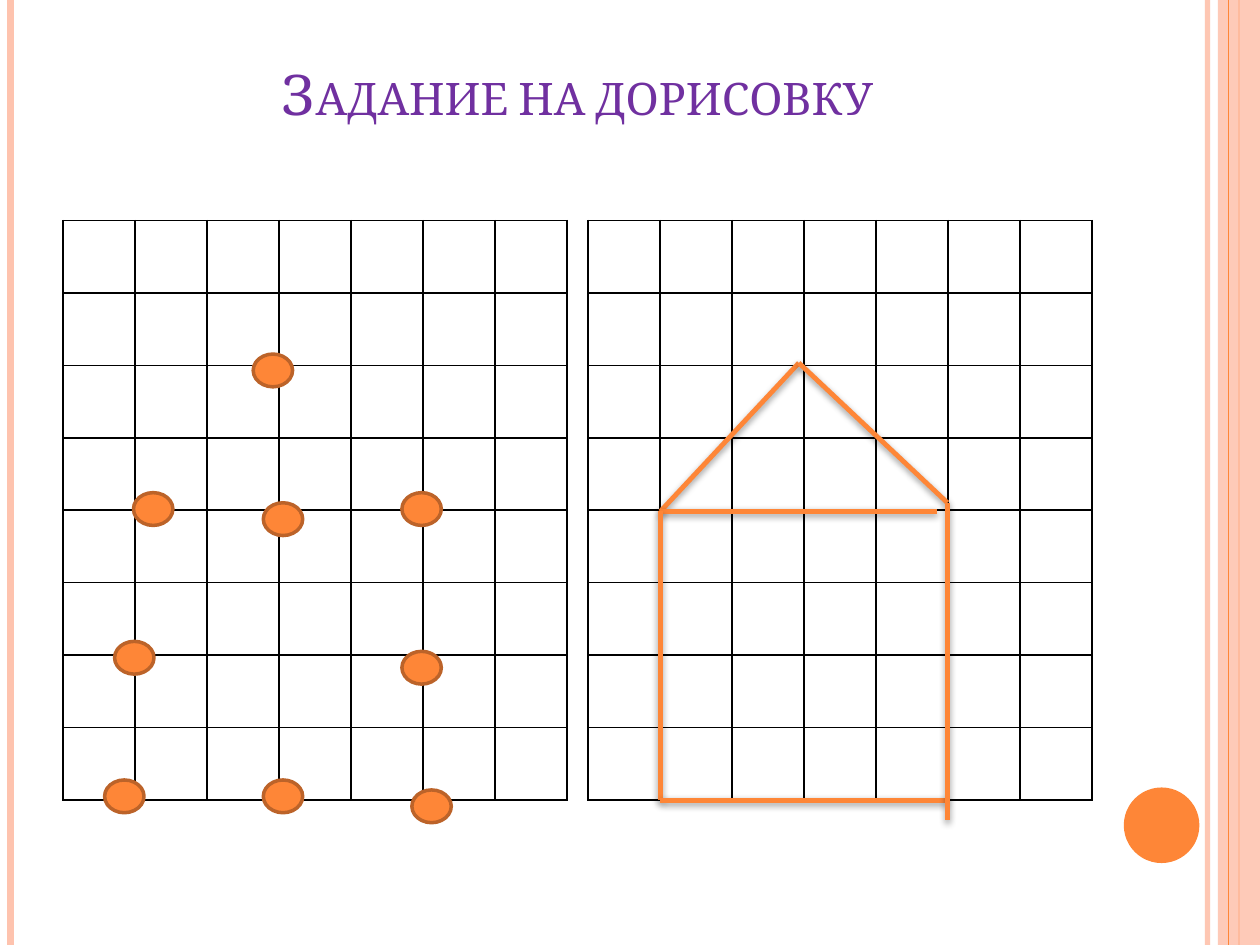
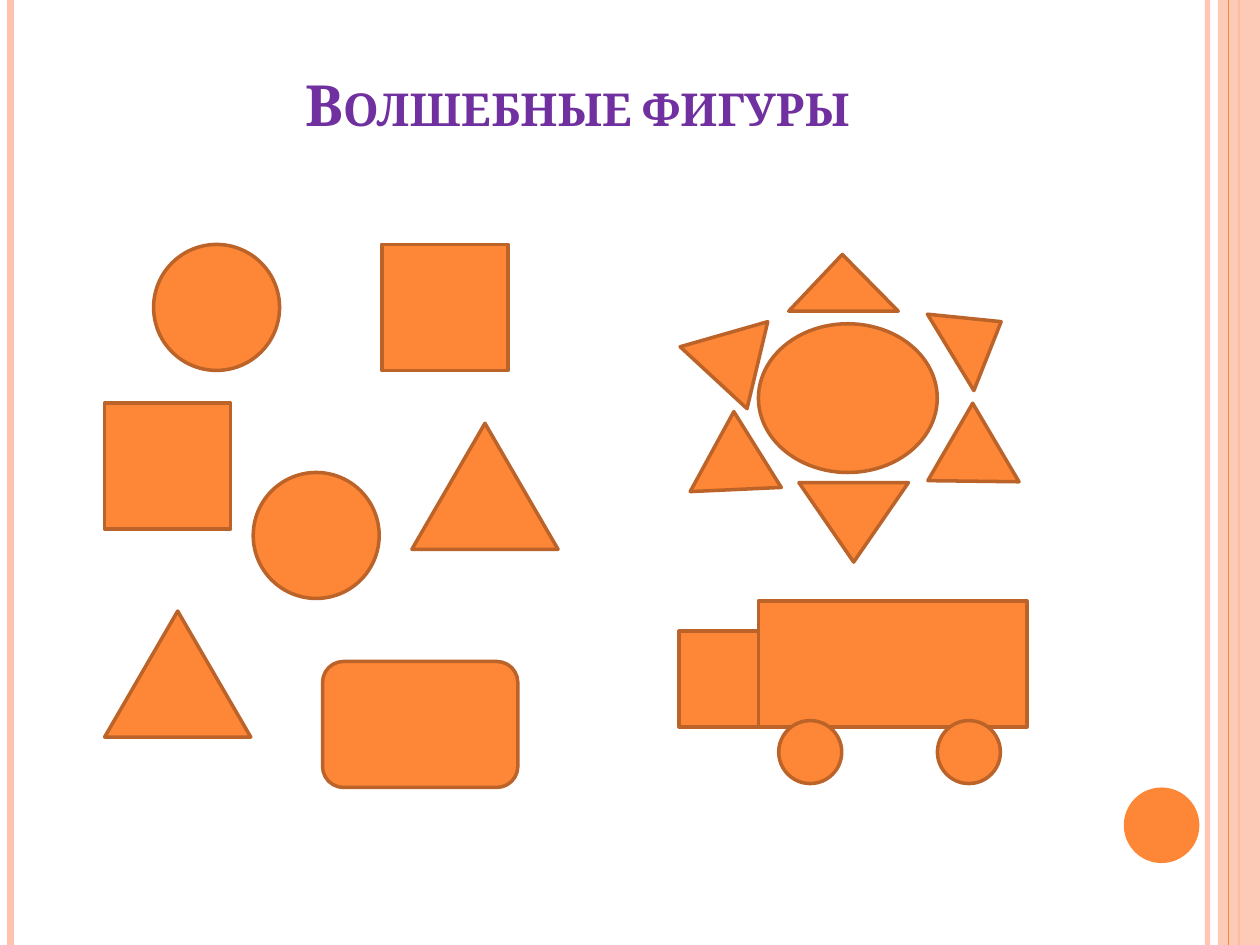
from lxml.etree import SubElement
from pptx import Presentation
from pptx.dml.color import RGBColor
from pptx.enum.shapes import MSO_CONNECTOR, MSO_SHAPE
from pptx.enum.text import MSO_ANCHOR, MSO_AUTO_SIZE, PP_ALIGN
from pptx.oxml.ns import qn
from pptx.util import Pt

WIDTH, HEIGHT = 720, 540
ORANGE, BROWN, PEACH = "FE8637", "BC6329", "FEC3AE"
PURPLE, BLACK = "7030A0", "000000"
FONT = "Cambria"
TITLE_BOX = (36, 21.6, 588, 90)

STRIPES = [
    (690, PEACH, 3, 93),
    (6, PEACH, 4.5, 100),
    (708, ORANGE, 1.5, 100),
    (702, ORANGE, 0.75, 100),
]
BAND = (696, 0, 24, HEIGHT)
BAND_OPACITY = 87
PAGE_DISC = (642.2, 450, 43.2, 43.2)

GRID_LEFTS, GRID_TOP = (36, 336), 126
GRID_COLUMNS, GRID_ROWS = 7, 8
GRID_WIDTH, GRID_HEIGHT = 288, 331.2

DOT_SIZE = (22.5, 18.75)
DOTS = [
    (229.7, 281.5), (65.5, 366.5), (144.7, 202.3),
    (229.7, 372.2), (235.4, 451.4), (150.5, 445.7),
    (59.8, 445.7), (150.5, 287.3), (76.3, 281.5),
]

EAVE_LEFT, EAVE_RIGHT = (377.3, 292.3), (541.4, 287.3)
ROOF_TOP, FLOOR_LEFT = (456.5, 207.4), (377.3, 457.2)
HOUSE_LINES = [
    (EAVE_LEFT, ROOF_TOP),
    (ROOF_TOP, EAVE_RIGHT),
    (EAVE_LEFT, (535.7, 292.3)),
    (EAVE_LEFT, FLOOR_LEFT),
    (FLOOR_LEFT, (541.4, 457.2)),
    (EAVE_RIGHT, (541.4, 468.7)),
]

LOOSE_FIGURES = [
    (MSO_SHAPE.RECTANGLE, (59.8, 230.4, 72, 72)),
    (MSO_SHAPE.OVAL, (144.7, 270, 72, 72)),
    (MSO_SHAPE.ISOSCELES_TRIANGLE, (59.8, 349.2, 83.5, 72)),
    (MSO_SHAPE.ROUNDED_RECTANGLE, (184.3, 378, 111.6, 72)),
    (MSO_SHAPE.RECTANGLE, (218.2, 139.7, 72, 72)),
    (MSO_SHAPE.OVAL, (87.8, 139.7, 72, 72)),
    (MSO_SHAPE.ISOSCELES_TRIANGLE, (235.4, 241.9, 83.5, 72)),
]
SUN_DISC = (MSO_SHAPE.OVAL, (433.4, 185, 102.2, 85))
SUN_RAYS = [
    ((450.7, 145.4, 62.6, 32.4), 0, 0.49),
    ((385.2, 180.7, 51.1, 45.4), 283.4, 0.5),
    ((456.5, 275.8, 62.6, 45.4), 180, 0.5),
    ((388.1, 246.2, 51.1, 45.4), 238, 0.5),
    ((537.1, 241.2, 51.1, 45.4), 120.1, 0.5),
    ((532.1, 175.7, 51.1, 33.8), 58.7, 0.5),
]
TRUCK = [
    (MSO_SHAPE.RECTANGLE, (433.4, 343.4, 153.4, 72)),
    (MSO_SHAPE.FLOWCHART_CONNECTOR, (445, 411.8, 36, 36)),
    (MSO_SHAPE.FLOWCHART_CONNECTOR, (535.7, 411.8, 36, 36)),
    (MSO_SHAPE.RECTANGLE, (388.1, 360.7, 45.4, 54.7)),
]


def points(values):
    return [Pt(value) for value in values]


def color(hex_string):
    return RGBColor.from_string(hex_string)


def set_opacity(parent, percent):
    if percent < 100:
        srgb = next(parent.iter(qn("a:srgbClr")))
        SubElement(srgb, qn("a:alpha"), val=str(percent * 1000))


def add_figure(slide, kind, box, outline=BROWN, fill=ORANGE):
    shape = slide.shapes.add_shape(kind, *points(box))
    shape.shadow.inherit = False
    shape.fill.solid()
    shape.fill.fore_color.rgb = color(fill)
    if outline:
        shape.line.color.rgb = color(outline)
        shape.line.width = Pt(2)
    else:
        shape.line.fill.background()
    return shape


def add_line(slide, start, end, line_color, width, opacity=100, shadow=False):
    connector = slide.shapes.add_connector(
        MSO_CONNECTOR.STRAIGHT, *points(start + end))
    connector.line.color.rgb = color(line_color)
    connector.line.width = Pt(width)
    properties = connector._element.spPr
    set_opacity(properties, opacity)
    effects = SubElement(properties, qn("a:effectLst"))
    if shadow:
        outer = SubElement(
            effects, qn("a:outerShdw"), blurRad=str(Pt(4)),
            dist=str(Pt(1.6)), dir="5400000", rotWithShape="0")
        SubElement(outer, qn("a:srgbClr"), val=BLACK)
        set_opacity(outer, 42)
    return connector


def decorate_layout(layout, slide):
    """Draw the shared stripes and disc, then move them to the layout."""
    stripes = [
        add_line(slide, (left, 0), (left, HEIGHT), stripe_color, width, opacity)
        for left, stripe_color, width, opacity in STRIPES
    ]
    band = add_figure(slide, MSO_SHAPE.RECTANGLE, BAND, None, PEACH)
    set_opacity(band._element.spPr, BAND_OPACITY)
    disc = add_figure(slide, MSO_SHAPE.OVAL, PAGE_DISC, None)
    for shape in stripes[:3] + [band, stripes[3], disc]:
        layout.shapes._spTree.append(shape._element)


def set_title(slide, text, size, bottom_margin, bold=False):
    title = slide.shapes.title
    title.left, title.top, title.width, title.height = points(TITLE_BOX)
    frame = title.text_frame
    frame.text = text
    frame.word_wrap = True
    frame.auto_size = MSO_AUTO_SIZE.NONE
    frame.vertical_anchor = MSO_ANCHOR.BOTTOM
    frame.margin_bottom = Pt(bottom_margin)
    paragraph = frame.paragraphs[0]
    paragraph.alignment = PP_ALIGN.CENTER
    run = paragraph.runs[0]
    run.font.name = FONT
    run.font.size = Pt(size)
    run.font.bold = bold
    run.font.color.rgb = color(PURPLE)
    run._r.get_or_add_rPr().set("cap", "small")


def add_border(cell):
    properties = cell._tc.get_or_add_tcPr()
    for position, side in enumerate(("lnL", "lnR", "lnT", "lnB")):
        line = properties.makeelement(qn(f"a:{side}"), {"w": str(Pt(1))})
        fill = SubElement(line, qn("a:solidFill"))
        SubElement(fill, qn("a:srgbClr"), val=BLACK)
        properties.insert(position, line)


def add_grid(slide, left):
    box = points((left, GRID_TOP, GRID_WIDTH, GRID_HEIGHT))
    table = slide.shapes.add_table(GRID_ROWS, GRID_COLUMNS, *box).table
    table.first_row = table.horz_banding = False
    for column in table.columns:
        column.width = Pt(GRID_WIDTH / GRID_COLUMNS)
    for row in table.rows:
        row.height = Pt(GRID_HEIGHT / GRID_ROWS)
    for cell in table.iter_cells():
        cell.fill.background()
        add_border(cell)


def build_drawing_slide(slide):
    set_title(slide, "Задание на дорисовку", 32, 39.3)
    for left in GRID_LEFTS:
        add_grid(slide, left)
    for dot in DOTS:
        add_figure(slide, MSO_SHAPE.FLOWCHART_CONNECTOR, dot + DOT_SIZE)
    for start, end in HOUSE_LINES:
        add_line(slide, start, end, ORANGE, 2.75, shadow=True)


def build_figures_slide(slide):
    set_title(slide, "Волшебные фигуры", 32.4, 32.9, bold=True)
    for kind, box in LOOSE_FIGURES + [SUN_DISC]:
        add_figure(slide, kind, box)
    for box, rotation, apex in SUN_RAYS:
        ray = add_figure(slide, MSO_SHAPE.ISOSCELES_TRIANGLE, box)
        ray.rotation = rotation
        ray.adjustments[0] = apex
    for kind, box in TRUCK:
        add_figure(slide, kind, box)


def main():
    presentation = Presentation()
    presentation.slide_width, presentation.slide_height = points((WIDTH, HEIGHT))
    layout = presentation.slide_layouts[5]
    drawing_slide = presentation.slides.add_slide(layout)
    decorate_layout(layout, drawing_slide)
    build_drawing_slide(drawing_slide)
    build_figures_slide(presentation.slides.add_slide(layout))
    presentation.save("out.pptx")


if __name__ == "__main__":
    main()
